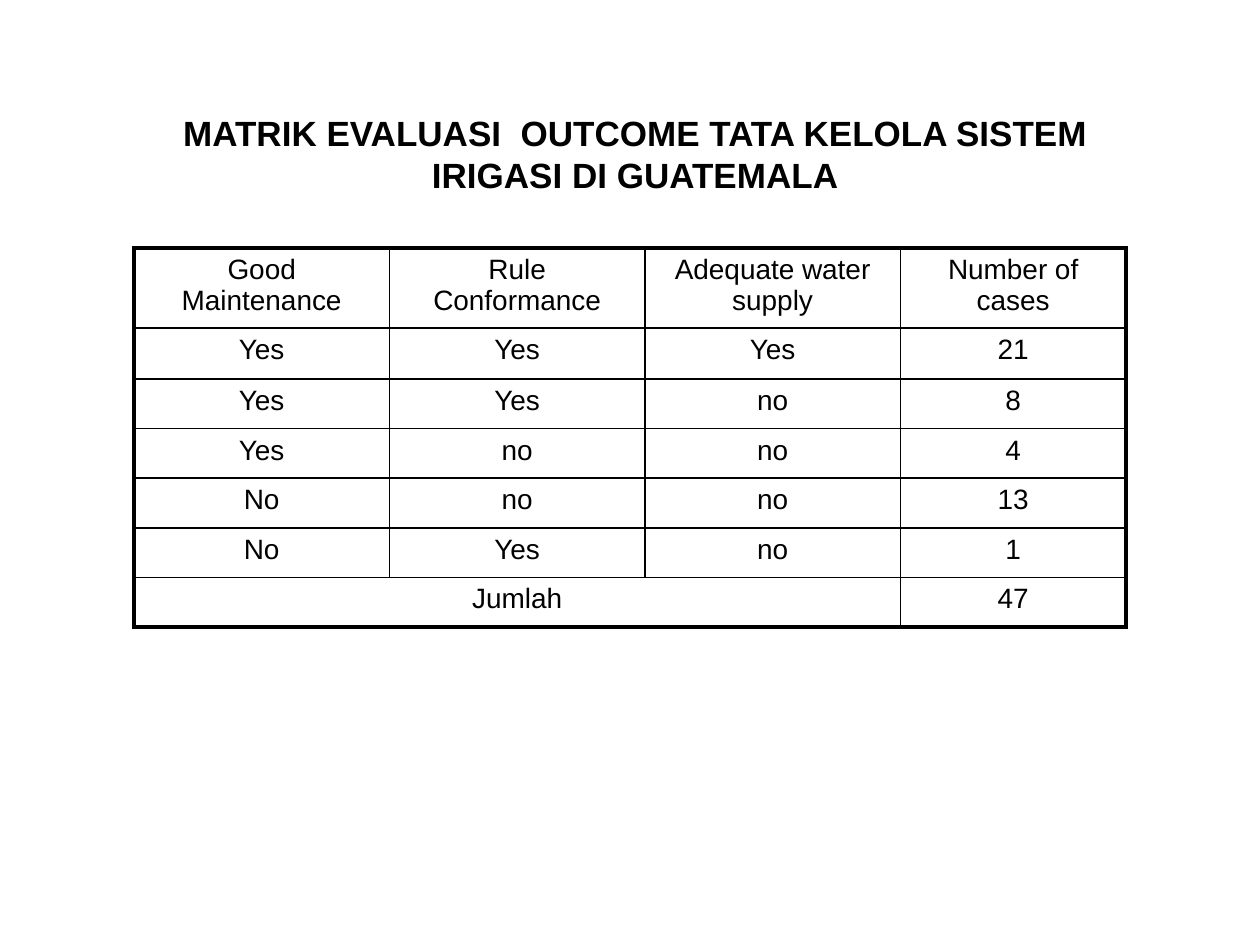
from lxml.etree import SubElement
from pptx import Presentation
from pptx.dml.color import RGBColor
from pptx.enum.text import PP_ALIGN
from pptx.oxml.ns import qn
from pptx.util import Cm, Pt

COLORS = {"ink": "000000"}
FONT = "Arial"
THIN, THICK = Pt(1), Pt(2.25)


def style_text(text_frame, size, bold=False):
    for paragraph in text_frame.paragraphs:
        paragraph.alignment = PP_ALIGN.CENTER
        for run in paragraph.runs:
            run.font.name = FONT
            run.font.size = Pt(size)
            run.font.bold = bold
            run.font.color.rgb = RGBColor.from_string(COLORS["ink"])


def add_borders(cell, widths):
    """Draw cell borders; widths are in the order left, right, top, bottom."""
    properties = cell._tc.get_or_add_tcPr()
    for side, width in zip("LRTB", widths):
        line = SubElement(properties, qn(f"a:ln{side}"), w=str(int(width)))
        fill = SubElement(line, qn("a:solidFill"))
        SubElement(fill, qn("a:srgbClr"), val=COLORS["ink"])


prs = Presentation()
prs.slide_width, prs.slide_height = Cm(25.4), Cm(19.05)
slide = prs.slides.add_slide(prs.slide_layouts[6])

# Title
title = slide.shapes.add_textbox(Cm(2.9), Cm(2.13), Cm(19.81), Cm(1.96)).text_frame
title.word_wrap = True
title.text = "MATRIK EVALUASI  OUTCOME TATA KELOLA SISTEM IRIGASI DI GUATEMALA"
style_text(title, 20, bold=True)

# Evaluation matrix
matrix = [
    ["Good Maintenance", "Rule Conformance", "Adequate water supply", "Number of cases"],
    ["Yes", "Yes", "Yes", "21"],
    ["Yes", "Yes", "no", "8"],
    ["Yes", "no", "no", "4"],
    ["No", "no", "no", "13"],
    ["No", "Yes", "no", "1"],
    ["Jumlah", "", "", "47"],
]
column_widths = [5.15] * 3 + [4.55]
row_heights = [1.61, 1.03] + [1.0] * 5
last_row, last_column = len(matrix) - 1, len(column_widths) - 1

table = slide.shapes.add_table(
    len(matrix), len(column_widths), Cm(2.7), Cm(5),
    Cm(sum(column_widths)), Cm(sum(row_heights)),
).table
table.first_row = table.horz_banding = False
for column, width in zip(table.columns, column_widths):
    column.width = Cm(width)
for row, height in zip(table.rows, row_heights):
    row.height = Cm(height)
table.cell(last_row, 0).merge(table.cell(last_row, 2))

for r, values in enumerate(matrix):
    for c, value in enumerate(values):
        cell = table.cell(r, c)
        if value:
            cell.text_frame.text = value
            style_text(cell.text_frame, 16)
        on_edge = (c == 0, c == last_column, r == 0, r == last_row)
        add_borders(cell, [THICK if edge else THIN for edge in on_edge])
        cell.fill.background()

prs.save("out.pptx")
